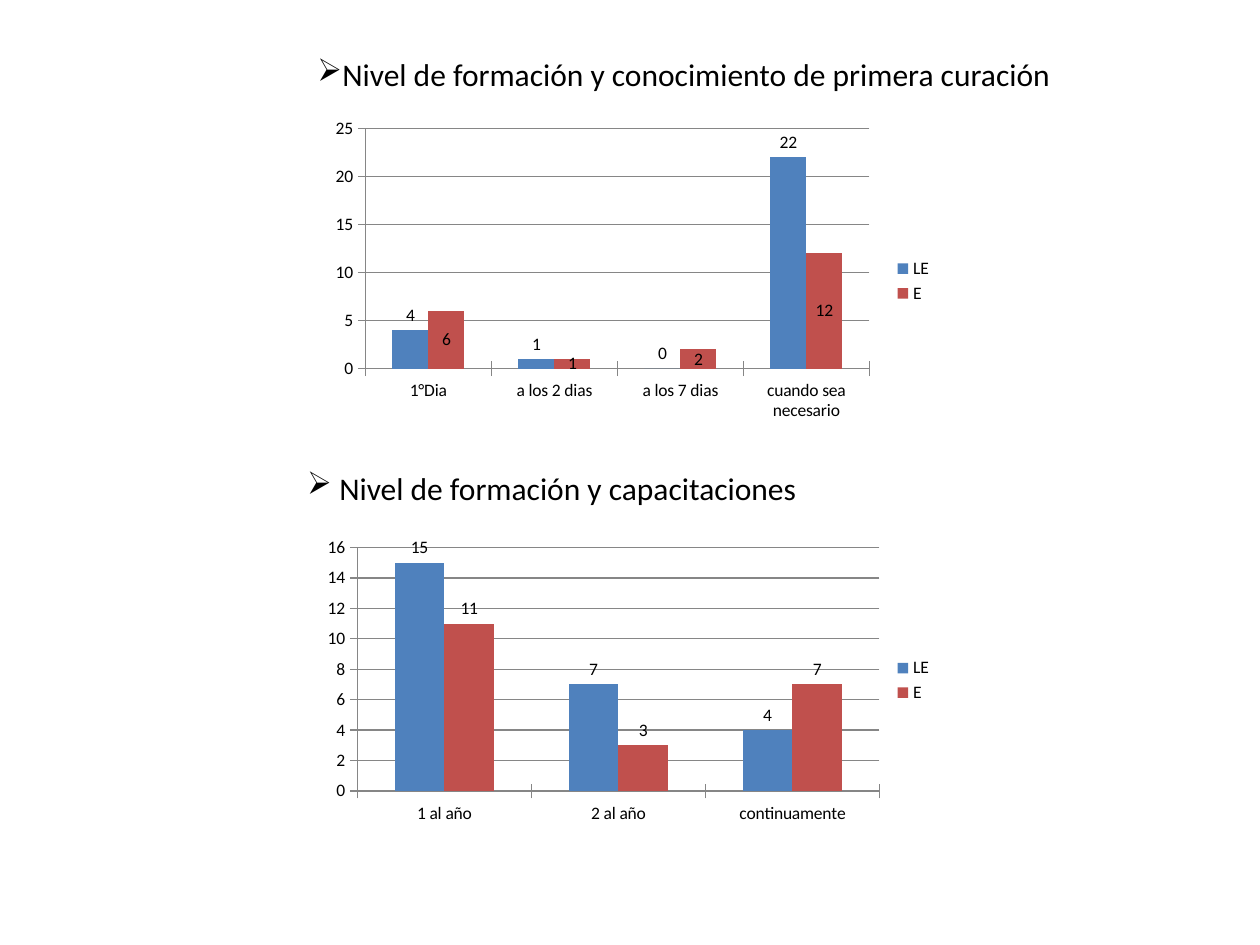
from lxml.etree import SubElement
from pptx import Presentation
from pptx.chart.data import CategoryChartData as ChartData
from pptx.dml.color import RGBColor
from pptx.enum.chart import XL_CHART_TYPE as ChartType
from pptx.enum.chart import XL_LABEL_POSITION as LabelPosition
from pptx.enum.chart import XL_LEGEND_POSITION as LegendPosition
from pptx.enum.chart import XL_TICK_MARK as TickMark
from pptx.enum.text import MSO_AUTO_SIZE as AutoSize
from pptx.oxml import parse_xml
from pptx.oxml.ns import nsdecls, qn
from pptx.util import Inches, Pt

FONT = "Calibri"
BLACK = "000000"
AXIS_GRAY = "868686"
SERIES_COLORS = ("4F81BD", "C0504D")
OUTSIDE, CENTER = LabelPosition.OUTSIDE_END, LabelPosition.CENTER


def color(hex_value):
    return RGBColor.from_string(hex_value)


def box(*lengths):
    return [Inches(length) for length in lengths]


def set_attributes(target, values):
    for name, value in values.items():
        setattr(target, name, value)


def format_font(font, size):
    set_attributes(font, {"name": FONT, "size": Pt(size), "bold": False})
    font.color.rgb = color(BLACK)


def add_heading(slide, position, text, wrap):
    shape = slide.shapes.add_textbox(*box(*position))
    frame = shape.text_frame
    set_attributes(frame, {"word_wrap": wrap,
                           "auto_size": AutoSize.SHAPE_TO_FIT_TEXT})
    paragraph = frame.paragraphs[0]
    run = paragraph.add_run()
    run.text = text
    format_font(run.font, 18)
    # Arrow bullet
    properties = paragraph._p.get_or_add_pPr()
    SubElement(properties, qn("a:buChar")).set("char", "➢")


def set_plot_layout(chart, layout):
    """Fix the inner plot area as fractions of the chart."""
    parts = "".join(f'<c:{tag}Mode val="edge"/>' for tag in "xy")
    parts += "".join(f'<c:{tag} val="{value}"/>'
                     for tag, value in zip("xywh", layout))
    plot_area = chart._chartSpace.chart.plotArea
    for old_layout in plot_area.findall(qn("c:layout")):
        plot_area.remove(old_layout)
    plot_area.insert(0, parse_xml(
        f'<c:layout {nsdecls("c")}><c:manualLayout>'
        f'<c:layoutTarget val="inner"/>{parts}</c:manualLayout></c:layout>'))


def format_series(series, fill, label_position):
    series.format.fill.solid()
    series.format.fill.fore_color.rgb = color(fill)
    labels = series.data_labels
    set_attributes(labels, {"show_value": True, "position": label_position})
    format_font(labels.font, 10)


def add_column_chart(slide, position, categories, series_values,
                     label_positions, layout=None):
    data = ChartData()
    data.categories = categories
    for name, values in series_values.items():
        data.add_series(name, values)
    chart = slide.shapes.add_chart(
        ChartType.COLUMN_CLUSTERED, *box(*position), data).chart
    set_attributes(chart, {"has_title": False, "has_legend": True})
    set_attributes(chart.legend, {"position": LegendPosition.RIGHT,
                                  "include_in_layout": False})
    format_font(chart.font, 10)

    # Axes and gridlines
    value_axis = chart.value_axis
    value_axis.has_major_gridlines = True
    for axis in (chart.category_axis, value_axis):
        axis.major_tick_mark = TickMark.CROSS
    for part in (chart.category_axis, value_axis, value_axis.major_gridlines):
        part.format.line.color.rgb = color(AXIS_GRAY)

    # Columns
    plot = chart.plots[0]
    set_attributes(plot, {"gap_width": 150, "overlap": 0,
                          "vary_by_categories": False})
    for series, fill, label in zip(plot.series, SERIES_COLORS,
                                   label_positions):
        format_series(series, fill, label)
    if layout:
        set_plot_layout(chart, layout)


def main():
    presentation = Presentation()
    set_attributes(presentation, {"slide_width": Inches(10),
                                  "slide_height": Inches(7.5)})
    slide = presentation.slides.add_slide(presentation.slide_layouts[6])

    # First dressing change
    add_heading(slide, (2.42, 0.39, 6.09, 0.4),
                "Nivel de formación y conocimiento de primera curación", False)
    add_column_chart(
        slide, (2.5, 0.94, 5, 2.58),
        ("1°Dia", "a los 2 dias", "a los 7 dias", "cuando sea necesario"),
        {"LE": (4, 1, 0, 22), "E": (6, 1, 2, 12)},
        (OUTSIDE, CENTER), layout=(0.08, 0.03, 0.8, 0.74))

    # Training
    add_heading(slide, (2.34, 3.67, 5, 0.4),
                " Nivel de formación y capacitaciones", True)
    add_column_chart(
        slide, (2.5, 4.22, 5, 2.36),
        ("1 al año", "2 al año", "continuamente"),
        {"LE": (15, 7, 4), "E": (11, 3, 7)}, (OUTSIDE, OUTSIDE))

    presentation.save("out.pptx")


if __name__ == "__main__":
    main()
